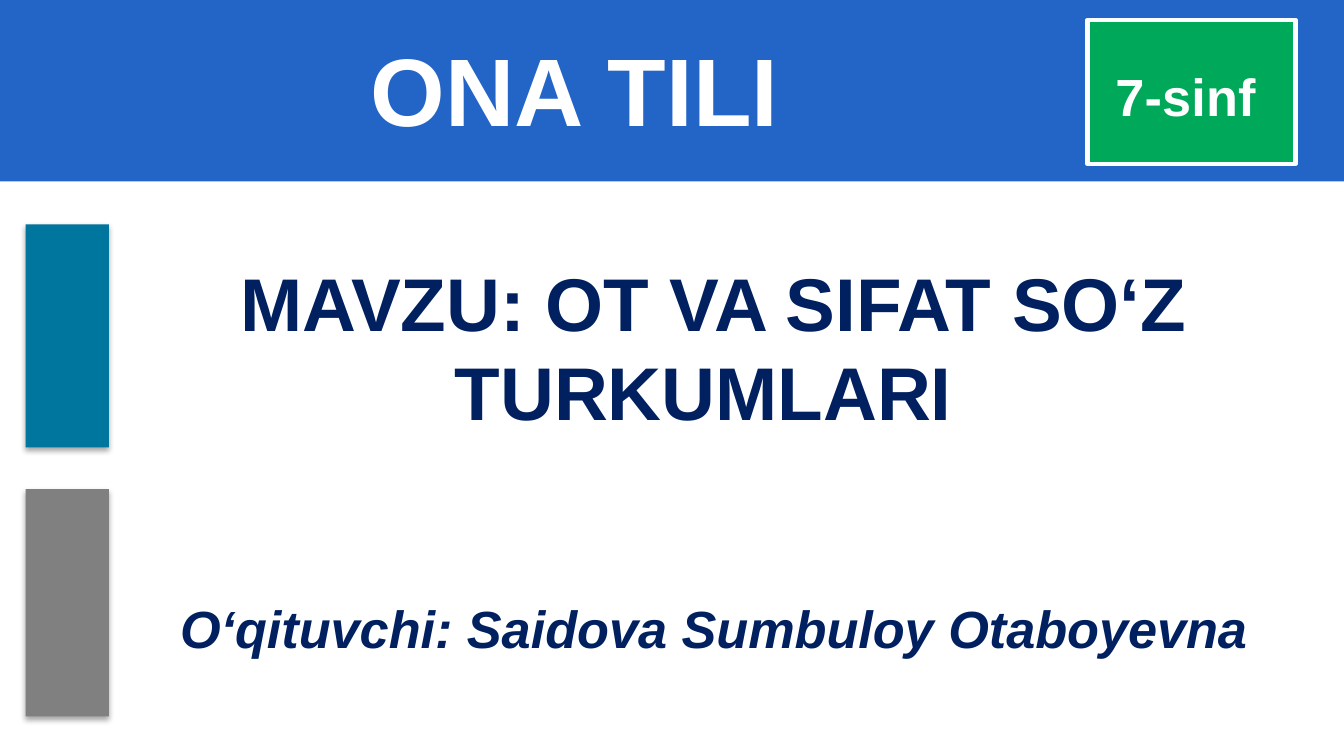
from lxml import etree
from pptx import Presentation
from pptx import util as u
from pptx.dml.color import RGBColor
from pptx.enum import shapes, text
from pptx.oxml import ns

SLIDE_WIDTH = 10
SLIDE_HEIGHT = SLIDE_WIDTH * 9 / 16
NAVY, WHITE = "002060", "FEFEFE"
LEFT, CENTER = text.PP_ALIGN.LEFT, text.PP_ALIGN.CENTER

# left, top, width, height, fill, outline, shadow
BLOCKS = [
    (0, 0, SLIDE_WIDTH, 1.35, "2365C7", None, False),   # header band
    (0.19, 1.67, 0.62, 1.66, "00759E", None, True),     # topic marker
    (0.19, 3.64, 0.62, 1.69, "808080", None, True),     # teacher marker
    (8.09, 0.15, 1.55, 1.07, "00A859", WHITE, False),   # grade badge
]

# left, top, width, height, wording, size, colour, italic, alignment, letter spacing
TEXTS = [
    (2.76, 0.21, 4.51, 0.88, "ONA TILI", 51.4, "FFFFFF", False, LEFT, 0.1),
    (0.62, 1.89, 9.38, 1.4, "MAVZU: OT VA SIFAT SO‘Z TURKUMLARI ", 40, NAVY, False, CENTER, 0),
    (0.62, 4.42, 9.38, 0.5, "O‘qituvchi: Saidova Sumbuloy Otaboyevna", 28, NAVY, True, CENTER, 0),
    (8.3, 0.46, 1.17, 0.49, "7-sinf", 28, WHITE, False, LEFT, 0.1),
]


def color(value):
    return RGBColor.from_string(value)


def add_shadow(shape):
    """Add a soft shadow falling straight down."""
    effects = shape._element.spPr.find(ns.qn("a:effectLst"))
    shadow = etree.SubElement(effects, ns.qn("a:outerShdw"), blurRad=str(u.Pt(3.1)),
                              dist=str(u.Pt(1.8)), dir="5400000", rotWithShape="0")
    black = etree.SubElement(shadow, ns.qn("a:srgbClr"), val="000000")
    etree.SubElement(black, ns.qn("a:alpha"), val="35000")


def add_block(slide, left, top, width, height, fill, outline, shadow):
    shape = slide.shapes.add_shape(shapes.MSO_SHAPE.RECTANGLE,
                                   *map(u.Inches, (left, top, width, height)))
    shape.fill.solid()
    shape.fill.fore_color.rgb = color(fill)
    if outline:
        shape.line.color.rgb = color(outline)
        shape.line.width = u.Pt(2.4)
    else:
        shape.line.fill.background()
    shape.shadow.inherit = False
    if shadow:
        add_shadow(shape)


def add_text(slide, left, top, width, height, wording, size, fill, italic,
             alignment, letter_spacing):
    box = slide.shapes.add_textbox(*map(u.Inches, (left, top, width, height)))
    frame = box.text_frame
    frame.word_wrap = True
    frame.margin_left = frame.margin_right = frame.margin_bottom = 0
    frame.margin_top = u.Inches(0.02)
    paragraph = frame.paragraphs[0]
    paragraph.alignment = alignment
    run = paragraph.add_run()
    run.text = wording
    font = run.font
    font.name, font.size, font.bold, font.italic = "Arial", u.Pt(size), True, italic
    font.color.rgb = color(fill)
    if letter_spacing:
        run._r.get_or_add_rPr().set("spc", str(round(letter_spacing * 100)))


presentation = Presentation()
presentation.slide_width = u.Inches(SLIDE_WIDTH)
presentation.slide_height = u.Inches(SLIDE_HEIGHT)
slide = presentation.slides.add_slide(presentation.slide_layouts[6])
for block in BLOCKS:
    add_block(slide, *block)
for item in TEXTS:
    add_text(slide, *item)
presentation.save("out.pptx")
